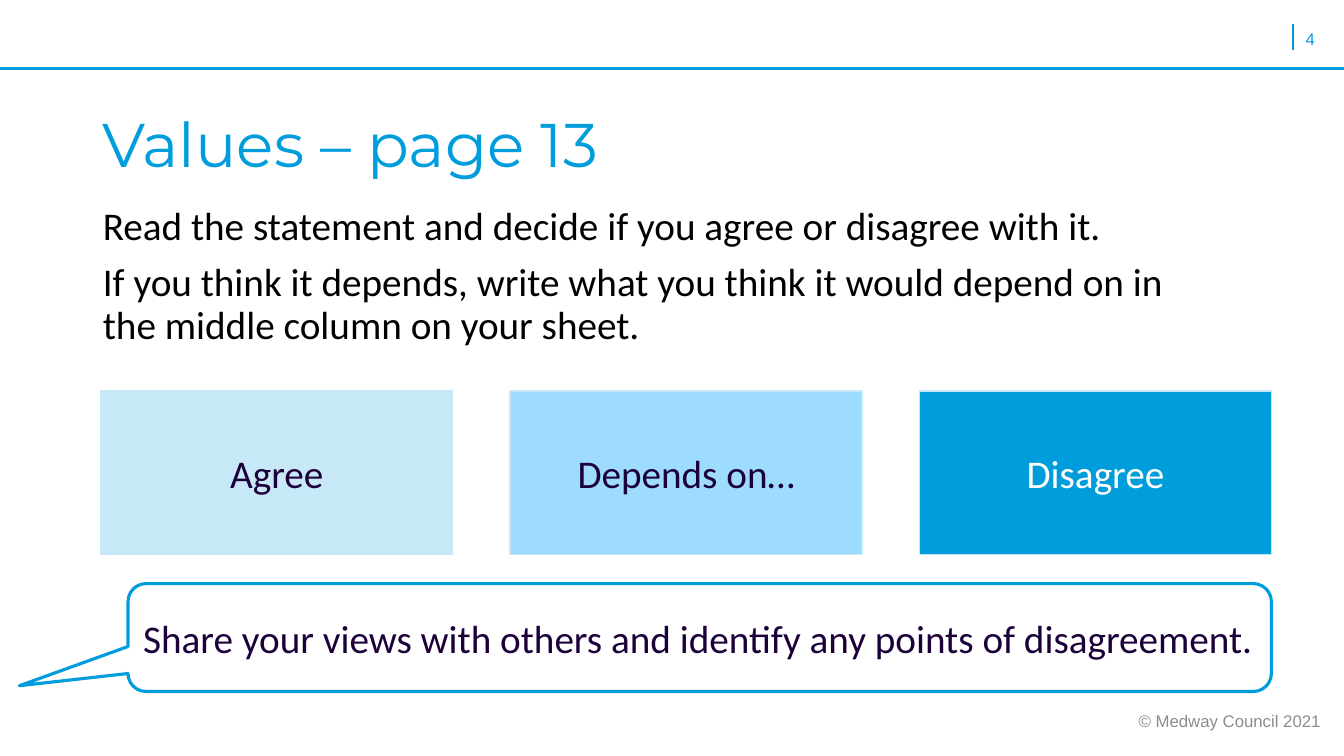
import pptx
import pptx.dml.color
import pptx.enum.shapes
import pptx.enum.text
import pptx.oxml.ns
import pptx.util
from pptx.util import Inches

COLOURS = {
    "blue": "009DDC",
    "pale": "C7E9F7",
    "sky": "9DDCFF",
    "ink": "1C0039",
    "grey": "8C8C8C",
    "black": "000000",
    "white": "FFFFFF",
}
ALIGN = pptx.enum.text.PP_ALIGN
ANCHOR = pptx.enum.text.MSO_ANCHOR
SHAPE = pptx.enum.shapes.MSO_SHAPE


def rgb(name):
    return pptx.dml.color.RGBColor.from_string(COLOURS[name])


def write(frame, *lines, size=28, font="Calibri", colour="ink", align=ALIGN.LEFT,
          anchor=ANCHOR.MIDDLE, spacing=None, gap=0):
    frame.word_wrap = True
    frame.auto_size = pptx.enum.text.MSO_AUTO_SIZE.NONE
    frame.vertical_anchor = anchor
    for index, line in enumerate(lines):
        paragraph = frame.add_paragraph() if index else frame.paragraphs[0]
        properties = paragraph._p.get_or_add_pPr()
        properties.set("marL", "0")
        properties.set("indent", "0")
        properties.append(properties.makeelement(pptx.oxml.ns.qn("a:buNone"), {}))
        paragraph.alignment = align
        paragraph.line_spacing = spacing
        paragraph.space_before = pptx.util.Pt(gap if index else 0)
        run = paragraph.add_run()
        run.text = line
        run.font.size = pptx.util.Pt(size)
        run.font.name = font
        run.font.color.rgb = rgb(colour)


presentation = pptx.Presentation()
presentation.slide_width = Inches(13.33)
presentation.slide_height = Inches(7.5)
slide = presentation.slides.add_slide(presentation.slide_layouts[1])
shapes = slide.shapes

# Header rules
for x1, y1, x2, y2, width in [(12.82, 0.24, 12.82, 0.5, 1.5),
                              (0, 0.68, 13.33, 0.68, 2.25)]:
    rule = shapes.add_connector(pptx.enum.shapes.MSO_CONNECTOR.STRAIGHT,
                                Inches(x1), Inches(y1), Inches(x2), Inches(y2))
    rule.line.color.rgb = rgb("blue")
    rule.line.width = pptx.util.Pt(width)
    effects = rule._element.spPr
    effects.append(effects.makeelement(pptx.oxml.ns.qn("a:effectLst"), {}))

# Title and instructions
title = shapes.title
title.left, title.top, title.width, title.height = map(Inches, (0.92, 1.08, 11.5, 1.45))
write(title.text_frame, "Values – page 13", size=44, font="Montserrat", colour="blue",
      anchor=ANCHOR.TOP, spacing=0.9)

instructions = slide.placeholders[1]
instructions.left, instructions.top, instructions.width, instructions.height = map(
    Inches, (0.92, 2, 11.09, 1.62))
write(instructions.text_frame,
      "Read the statement and decide if you agree or disagree with it.",
      "If you think it depends, write what you think it would depend on in "
      "the middle column on your sheet.",
      colour="black", anchor=ANCHOR.TOP, spacing=0.9, gap=10)

# Page number and copyright
page_number = shapes.add_textbox(Inches(12.85), Inches(0.24), Inches(0.42), Inches(0.26))
write(page_number.text_frame, "4", size=12, font="Arial", colour="blue", anchor=ANCHOR.TOP)
copyright_line = shapes.add_textbox(Inches(10.86), Inches(6.95), Inches(2.34), Inches(0.4))
write(copyright_line.text_frame, "© Medway Council 2021", size=12, font="Arial",
      colour="grey", align=ALIGN.RIGHT)

# Answer boxes
answers = [("Agree", "pale", "ink"), ("Depends on…", "sky", "ink"),
           ("Disagree", "blue", "white")]
for column, (answer, fill, colour) in enumerate(answers):
    box = shapes.add_shape(SHAPE.RECTANGLE, Inches(1 + 4.06 * column), Inches(3.88),
                           Inches(3.49), Inches(1.62))
    box.shadow.inherit = False
    box.fill.solid()
    box.fill.fore_color.rgb = rgb(fill)
    box.line.color.rgb = rgb("pale")
    box.line.width = pptx.util.Pt(1)
    write(box.text_frame, answer, colour=colour, align=ALIGN.CENTER)

# Discussion callout
callout = shapes.add_shape(SHAPE.ROUNDED_RECTANGULAR_CALLOUT, Inches(1.27), Inches(5.79),
                           Inches(11.34), Inches(1.07))
for index, value in enumerate((-0.595, 0.447, 0.167)):
    callout.adjustments[index] = value
callout.shadow.inherit = False
callout.fill.background()
callout.line.color.rgb = rgb("blue")
callout.line.width = pptx.util.Pt(2.25)
write(callout.text_frame,
      "Share your views with others and identify any points of disagreement.")

presentation.save("out.pptx")
